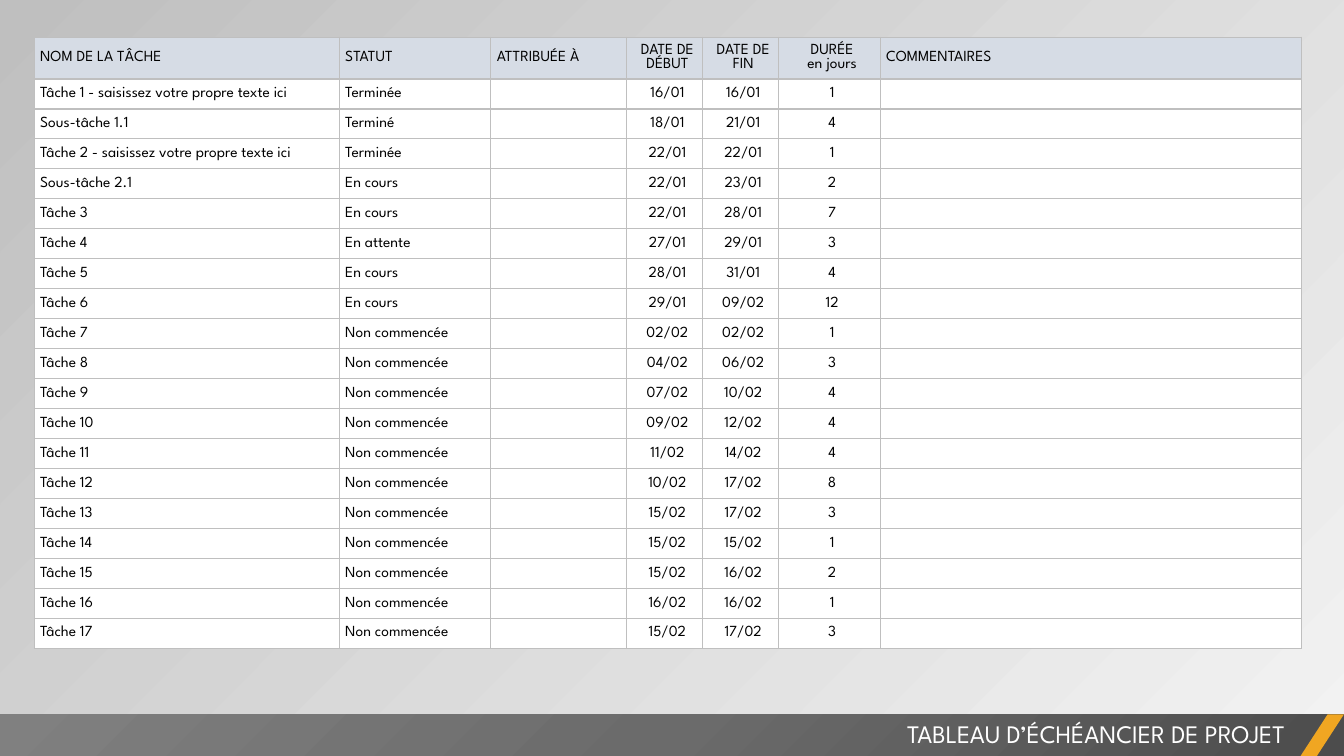
import dataclasses

import lxml.etree
import pptx
import pptx.dml.color
import pptx.enum.shapes
import pptx.enum.text
import pptx.oxml
import pptx.oxml.ns
import pptx.util

Cm = pptx.util.Cm
Pt = pptx.util.Pt
RGBColor = pptx.dml.color.RGBColor
ALIGN = pptx.enum.text.PP_ALIGN
MIDDLE = pptx.enum.text.MSO_ANCHOR.MIDDLE
SHAPE = pptx.enum.shapes.MSO_SHAPE
qn = pptx.oxml.ns.qn

FONT = "League Spartan"
BLACK = RGBColor(0x00, 0x00, 0x00)
WHITE = RGBColor(0xFF, 0xFF, 0xFF)
HEADER_BLUE = RGBColor(0xD6, 0xDC, 0xE5)
BORDER_GREY = RGBColor(0xBF, 0xBF, 0xBF)
LIGHT_GREY = RGBColor(0xF2, 0xF2, 0xF2)
ORANGE = RGBColor(0xF0, 0xA6, 0x22)
BAR_STOPS = (
    (0, RGBColor(0x4C, 0x4C, 0x4C)),
    (50, RGBColor(0x6B, 0x6B, 0x6B)),
    (100, RGBColor(0x80, 0x80, 0x80)),
)

SLIDE_W, SLIDE_H = 33.87, 19.05
BAR_TOP, BAR_H = 18.0, 1.06
TABLE_LEFT, TABLE_TOP = 0.86, 0.94
HEADER_H, BODY_H = 1.05, 14.36


@dataclasses.dataclass
class Column:
    heading: str
    width: float
    align: ALIGN = ALIGN.LEFT


@dataclasses.dataclass
class Task:
    name: str
    status: str
    start: str
    end: str
    days: int

    def cells(self) -> list[str]:
        return [self.name, self.status, "", self.start, self.end, str(self.days), ""]


COLUMNS = [
    Column("NOM DE LA TÂCHE", 7.69),
    Column("STATUT", 3.82),
    Column("ATTRIBUÉE À", 3.42),
    Column("DATE DE DÉBUT", 1.91, ALIGN.CENTER),
    Column("DATE DE FIN", 1.91, ALIGN.CENTER),
    Column("DURÉE\nen jours", 2.57, ALIGN.CENTER),
    Column("COMMENTAIRES", 10.62),
]

TASKS = [
    Task("Tâche 1 - saisissez votre propre texte ici", "Terminée", "16/01", "16/01", 1),
    Task("Sous-tâche 1.1", "Terminé", "18/01", "21/01", 4),
    Task("Tâche 2 - saisissez votre propre texte ici", "Terminée", "22/01", "22/01", 1),
    Task("Sous-tâche 2.1", "En cours", "22/01", "23/01", 2),
    Task("Tâche 3", "En cours", "22/01", "28/01", 7),
    Task("Tâche 4", "En attente", "27/01", "29/01", 3),
    Task("Tâche 5", "En cours", "28/01", "31/01", 4),
    Task("Tâche 6", "En cours", "29/01", "09/02", 12),
    Task("Tâche 7", "Non commencée", "02/02", "02/02", 1),
    Task("Tâche 8", "Non commencée", "04/02", "06/02", 3),
    Task("Tâche 9", "Non commencée", "07/02", "10/02", 4),
    Task("Tâche 10", "Non commencée", "09/02", "12/02", 4),
    Task("Tâche 11", "Non commencée", "11/02", "14/02", 4),
    Task("Tâche 12", "Non commencée", "10/02", "17/02", 8),
    Task("Tâche 13", "Non commencée", "15/02", "17/02", 3),
    Task("Tâche 14", "Non commencée", "15/02", "15/02", 1),
    Task("Tâche 15", "Non commencée", "15/02", "16/02", 2),
    Task("Tâche 16", "Non commencée", "16/02", "16/02", 1),
    Task("Tâche 17", "Non commencée", "15/02", "17/02", 3),
]


def write_text(tf, text: str, *, size: int = 11, color: RGBColor = BLACK,
               align: ALIGN = ALIGN.LEFT) -> None:
    for i, line in enumerate(text.split("\n")):
        p = tf.paragraphs[0] if i == 0 else tf.add_paragraph()
        p.alignment = align
        if not line:
            # An empty cell keeps the small size so its row does not grow
            lxml.etree.SubElement(p._p, qn("a:endParaRPr")).set("sz", str(size * 100))
            continue
        r = p.add_run()
        r.text = line
        r.font.name = FONT
        r.font.size = Pt(size)
        r.font.color.rgb = color


def add_borders(cell, color: RGBColor, width: float) -> None:
    tc_pr = cell._tc.get_or_add_tcPr()
    for i, side in enumerate(("lnL", "lnR", "lnT", "lnB")):
        ln = lxml.etree.Element(qn(f"a:{side}"), w=str(Pt(width)))
        fill = lxml.etree.SubElement(ln, qn("a:solidFill"))
        lxml.etree.SubElement(fill, qn("a:srgbClr"), val=str(color))
        tc_pr.insert(i, ln)


def fill_cell(cell, text: str, align: ALIGN, fill: RGBColor) -> None:
    cell.margin_left = Cm(0.15)
    cell.margin_top = cell.margin_right = cell.margin_bottom = 0
    cell.vertical_anchor = MIDDLE
    cell.fill.solid()
    cell.fill.fore_color.rgb = fill
    add_borders(cell, BORDER_GREY, 1)
    write_text(cell.text_frame, text, align=align)


def add_schedule(s) -> None:
    rows = [[c.heading for c in COLUMNS]] + [t.cells() for t in TASKS]
    width = sum(c.width for c in COLUMNS)
    tbl = s.shapes.add_table(len(rows), len(COLUMNS), Cm(TABLE_LEFT), Cm(TABLE_TOP),
                             Cm(width), Cm(HEADER_H + BODY_H)).table
    tbl.first_row = tbl.horz_banding = False
    for j, column in enumerate(COLUMNS):
        tbl.columns[j].width = Cm(column.width)
    for i, row in enumerate(rows):
        tbl.rows[i].height = Cm(BODY_H / len(TASKS) if i else HEADER_H)
        for j, text in enumerate(row):
            fill_cell(tbl.cell(i, j), text, COLUMNS[j].align, WHITE if i else HEADER_BLUE)


def add_plain_shape(s, kind: SHAPE, left: float, width: float):
    sp = s.shapes.add_shape(kind, Cm(left), Cm(BAR_TOP), Cm(width), Cm(BAR_H))
    sp.shadow.inherit = False
    sp.line.fill.background()
    sp.fill.solid()
    return sp


def set_radial_fill(sp, stops) -> None:
    ns = pptx.oxml.ns.nsdecls("a")
    stop_xml = "".join(f'<a:gs pos="{pos * 1000}"><a:srgbClr val="{color}"/></a:gs>'
                       for pos, color in stops)
    grad = pptx.oxml.parse_xml(
        f'<a:gradFill {ns} rotWithShape="1"><a:gsLst>{stop_xml}</a:gsLst>'
        '<a:path path="circle"><a:fillToRect l="100000" t="100000"/></a:path></a:gradFill>')
    solid = sp._element.spPr.find(qn("a:solidFill"))
    solid.getparent().replace(solid, grad)


def add_title_bar(s) -> None:
    bar = add_plain_shape(s, SHAPE.RECTANGLE, 0, SLIDE_W)
    set_radial_fill(bar, BAR_STOPS)
    accent = add_plain_shape(s, SHAPE.PARALLELOGRAM, 32.77, 1.1)
    accent.adjustments[0] = 0.65
    accent.fill.fore_color.rgb = ORANGE

    # The title sits in front of the bar
    title = s.shapes.title
    s.shapes._spTree.append(title._element)
    title.left, title.top, title.width, title.height = Cm(13.34), Cm(17.98), Cm(19.3), Cm(1.02)
    tf = title.text_frame
    tf.word_wrap = True
    tf.auto_size = pptx.enum.text.MSO_AUTO_SIZE.NONE
    tf.vertical_anchor = MIDDLE
    write_text(tf, "TABLEAU D’ÉCHÉANCIER DE PROJET", size=18, color=WHITE, align=ALIGN.RIGHT)


def main() -> None:
    prs = pptx.Presentation()
    prs.slide_width, prs.slide_height = Cm(SLIDE_W), Cm(SLIDE_H)
    s = prs.slides.add_slide(prs.slide_layouts[5])

    # Background, lightest at the bottom right
    fill = s.background.fill
    fill.gradient()
    fill.gradient_angle = 135
    for stop, color in zip(fill.gradient_stops, (LIGHT_GREY, BORDER_GREY)):
        stop.color.rgb = color

    add_schedule(s)
    add_title_bar(s)
    prs.save("out.pptx")


if __name__ == "__main__":
    main()
